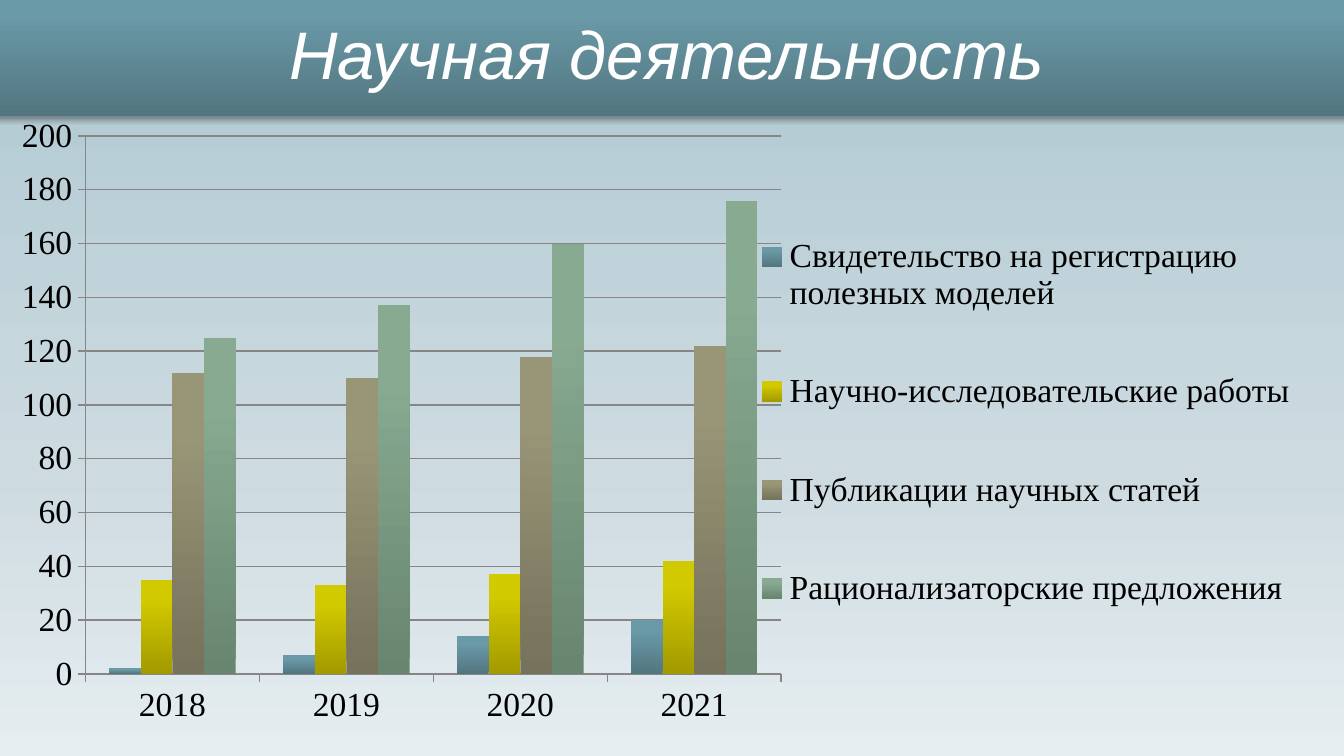
from dataclasses import dataclass

from lxml.etree import SubElement
from pptx import Presentation
from pptx.chart.data import CategoryChartData
from pptx.dml.color import RGBColor
from pptx.enum.chart import XL_CHART_TYPE, XL_LEGEND_POSITION, XL_TICK_MARK
from pptx.enum.shapes import MSO_SHAPE
from pptx.enum.text import MSO_ANCHOR, PP_ALIGN
from pptx.oxml import parse_xml
from pptx.oxml.ns import nsdecls, qn
from pptx.util import Inches, Pt

COLORS = {"title": "FFFFFF", "text": "000000", "grid": "868686", "shadow": "000000"}
PAGE_STOPS = [(0, "AEC7D0"), (62, "CDDBE1"), (100, "E6EDF0")]
HEADER_STOPS = [(0, "527680"), (80, "6A99A7"), (100, "6A9AA9")]
YEARS = ["2018", "2019", "2020", "2021"]
DOWNWARD, UPWARD = 270, 90


@dataclass
class Activity:
    name: str
    values: list[int]
    dark: str
    light: str


ACTIVITIES = [
    Activity("Свидетельство на регистрацию полезных моделей", [2, 7, 14, 20], "527680", "6A99A7"),
    Activity("Научно-исследовательские работы", [35, 33, 37, 42], "A39A00", "D2CA00"),
    Activity("Публикации научных статей", [112, 110, 118, 122], "76725B", "999577"),
    Activity("Рационализаторские предложения", [125, 137, 160, 176], "68856F", "88AA91"),
]


def color(name: str) -> RGBColor:
    return RGBColor.from_string(COLORS[name])


def paint_gradient(fill, owner, stops: list[tuple[int, str]], angle: int) -> None:
    """Fill with any number of stops; owner is the element holding the fill."""
    fill.gradient()
    fill.gradient_angle = angle
    stop_list = next(owner.iter(qn("a:gsLst")))
    for stop in list(stop_list):
        stop_list.remove(stop)
    for position, value in stops:
        stop = SubElement(stop_list, qn("a:gs"), pos=str(position * 1000))
        SubElement(stop, qn("a:srgbClr"), val=value)


def set_layout(left: float, top: float, width: float, height: float, target: str = ""):
    """Manual chart layout in fractions of the chart area."""
    entries = [("layoutTarget", target)] if target else []
    entries += [("xMode", "edge"), ("yMode", "edge")]
    entries += [("x", left), ("y", top), ("w", width), ("h", height)]
    body = "".join(f'<c:{tag} val="{value}"/>' for tag, value in entries)
    return parse_xml(f'<c:layout {nsdecls("c")}><c:manualLayout>{body}</c:manualLayout></c:layout>')


def draw_header(page, text: str) -> None:
    box = page.shapes.add_shape(
        MSO_SHAPE.RECTANGLE, Inches(-0.12), Inches(-0.08), Inches(10.16), Inches(0.94))
    paint_gradient(box.fill, box.element.spPr, HEADER_STOPS, UPWARD)
    box.line.fill.background()
    # Soft shadow under the band
    box.shadow.inherit = False
    effects = box.element.spPr.find(qn("a:effectLst"))
    shadow = SubElement(effects, qn("a:outerShdw"), blurRad=str(Pt(3.1)), dist=str(Pt(1.8)),
                        dir="5400000", rotWithShape="0")
    shade = SubElement(shadow, qn("a:srgbClr"), val=COLORS["shadow"])
    SubElement(shade, qn("a:alpha"), val="35000")
    # Title
    box.text_frame.vertical_anchor = MSO_ANCHOR.MIDDLE
    para = box.text_frame.paragraphs[0]
    para.alignment = PP_ALIGN.CENTER
    span = para.add_run()
    span.text = text
    for key, value in {"name": "Arial", "size": Pt(36), "italic": True}.items():
        setattr(span.font, key, value)
    span.font.color.rgb = color("title")


def draw_chart(page, activities: list[Activity]) -> None:
    data = CategoryChartData()
    data.categories = YEARS
    for activity in activities:
        data.add_series(activity.name, activity.values)
    chart = page.shapes.add_chart(
        XL_CHART_TYPE.COLUMN_CLUSTERED, Inches(-0.12), Inches(0.86),
        Inches(10.09), Inches(4.76), data).chart
    chart.has_title = False
    for key, value in {"name": "Times New Roman", "size": Pt(18)}.items():
        setattr(chart.font, key, value)
    chart.font.color.rgb = color("text")

    # Columns
    plot = chart.plots[0]
    for key, value in {"gap_width": 150, "overlap": 0, "vary_by_categories": False}.items():
        setattr(plot, key, value)
    for series, activity in zip(plot.series, activities):
        series.invert_if_negative = False
        fill = series.format.fill
        stops = [(0, activity.dark), (80, activity.light), (100, activity.light)]
        paint_gradient(fill, series._element, stops, UPWARD)

    # Axes
    values = chart.value_axis
    scale = {"minimum_scale": 0, "maximum_scale": 200, "major_unit": 20,
             "has_major_gridlines": True}
    for key, value in scale.items():
        setattr(values, key, value)
    for axis in (chart.category_axis, values):
        axis.major_tick_mark = XL_TICK_MARK.OUTSIDE
        axis.minor_tick_mark = XL_TICK_MARK.NONE
    for ruled in (chart.category_axis, values, values.major_gridlines):
        ruled.format.line.color.rgb = color("grid")
        ruled.format.line.width = Pt(0.75)

    # Plot area and legend positions
    area = next(chart._chartSpace.iter(qn("c:plotArea")))
    for layout in area.findall(qn("c:layout")):
        area.remove(layout)
    area.insert(0, set_layout(0.075, 0.032, 0.513, 0.841, "inner"))
    chart.has_legend = True
    legend = chart.legend
    legend.position = XL_LEGEND_POSITION.RIGHT
    legend.include_in_layout = False
    legend_element = next(chart._chartSpace.iter(qn("c:legend")))
    for layout in legend_element.findall(qn("c:layout")):
        legend_element.remove(layout)
    legend_element.find(qn("c:legendPos")).addnext(set_layout(0.566, 0.095, 0.405, 0.77))


def main() -> None:
    deck = Presentation()
    deck.slide_width, deck.slide_height = Inches(10), Inches(10 * 9 / 16)
    page = deck.slides.add_slide(deck.slide_layouts[6])
    paint_gradient(page.background.fill, page.element, PAGE_STOPS, DOWNWARD)
    draw_header(page, "Научная деятельность")
    draw_chart(page, ACTIVITIES)
    deck.save("out.pptx")


if __name__ == "__main__":
    main()
